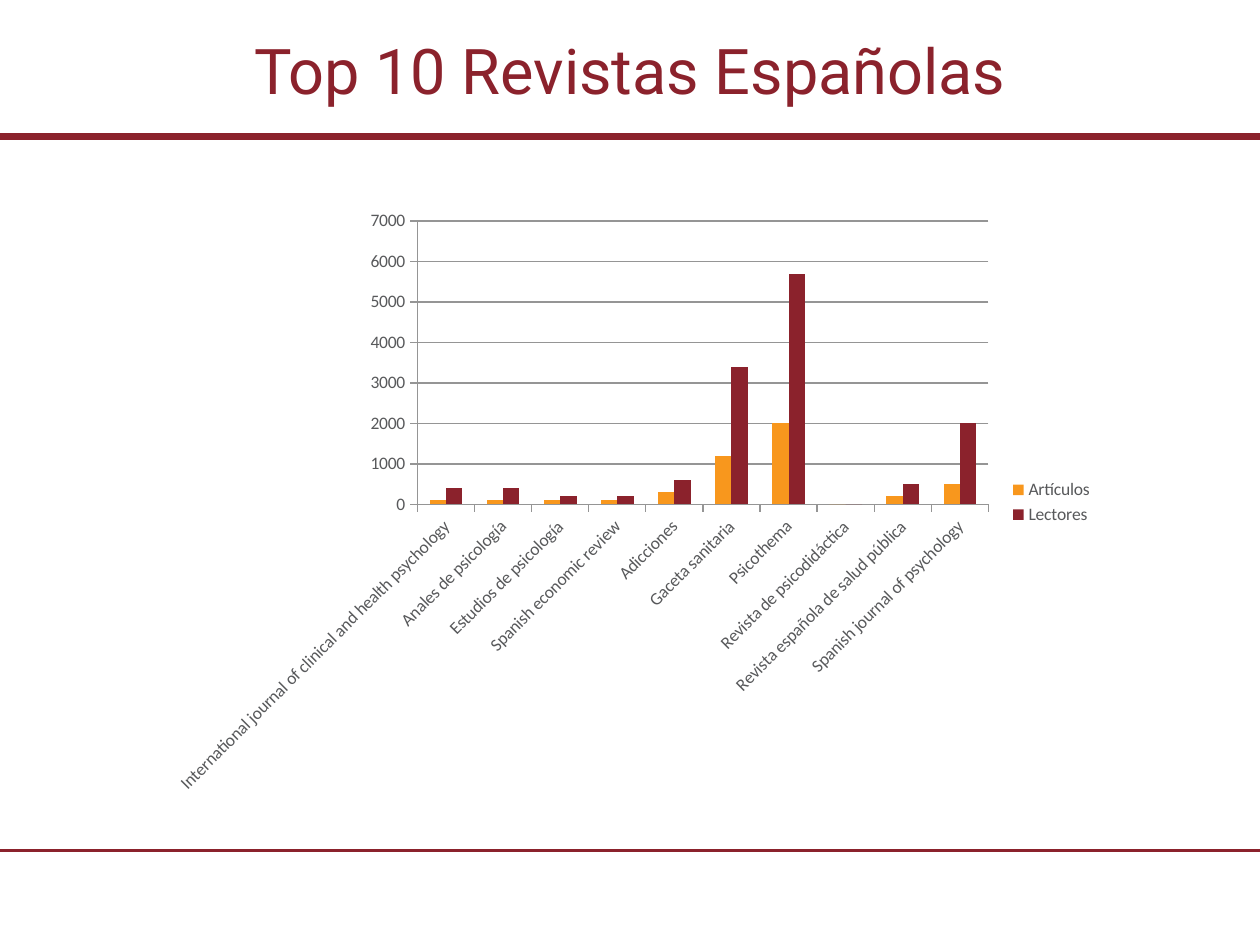
from dataclasses import dataclass

from lxml.etree import SubElement
from pptx import Presentation
from pptx.chart.data import CategoryChartData
from pptx.dml.color import RGBColor
from pptx.enum.chart import XL_CHART_TYPE as ChartType
from pptx.enum.chart import XL_LEGEND_POSITION as LegendPosition
from pptx.enum.chart import XL_TICK_MARK as TickMark
from pptx.enum.shapes import MSO_CONNECTOR as Connector
from pptx.enum.text import MSO_ANCHOR as Anchor
from pptx.enum.text import PP_ALIGN as Align
from pptx.oxml.ns import qn
from pptx.util import Pt


@dataclass(frozen=True)
class Theme:
    maroon: RGBColor = RGBColor(0x8B, 0x22, 0x2C)
    orange: RGBColor = RGBColor(0xF8, 0x97, 0x1D)
    text: RGBColor = RGBColor(0x58, 0x59, 0x5B)
    grid: RGBColor = RGBColor(0x95, 0x95, 0x95)
    title_font: str = "Roboto"
    chart_font: str = "Calibri"
    title_size: int = 36
    chart_size: int = 10


THEME = Theme()

JOURNALS = [
    # name, articles, readers
    ("International journal of clinical and health psychology", 100, 400),
    ("Anales de psicología", 100, 400),
    ("Estudios de psicología", 100, 200),
    ("Spanish economic review", 100, 200),
    ("Adicciones", 300, 600),
    ("Gaceta sanitaria", 1200, 3400),
    ("Psicothema", 2000, 5700),
    ("Revista de psicodidáctica", 0, 0),
    ("Revista española de salud pública", 200, 500),
    ("Spanish journal of psychology", 500, 2000),
]


def add_rule(page, left, right, top, width):
    rule = page.shapes.add_connector(
        Connector.STRAIGHT, Pt(left), Pt(top), Pt(right), Pt(top))
    rule.line.color.rgb = THEME.maroon
    rule.line.width = Pt(width)
    SubElement(rule._element.spPr, qn("a:effectLst"))


def set_title(page, text, left, top, width, height):
    title = page.shapes.title
    title.left, title.top = Pt(left), Pt(top)
    title.width, title.height = Pt(width), Pt(height)
    frame = title.text_frame
    frame.text = text
    frame.vertical_anchor = Anchor.MIDDLE
    para = frame.paragraphs[0]
    para.alignment = Align.CENTER
    font = para.runs[0].font
    font.name, font.size = THEME.title_font, Pt(THEME.title_size)
    font.color.rgb = THEME.maroon


def style_axis(axis):
    axis.major_tick_mark = TickMark.OUTSIDE
    axis.minor_tick_mark = TickMark.NONE
    axis.format.line.color.rgb = THEME.grid
    axis.format.line.width = Pt(0.75)


def add_journal_chart(page, left, top, width, height):
    names, articles, readers = zip(*JOURNALS)
    data = CategoryChartData(number_format="General")
    data.categories = names
    data.add_series("Artículos", articles)
    data.add_series("Lectores", readers)
    chart = page.shapes.add_chart(
        ChartType.COLUMN_CLUSTERED,
        Pt(left), Pt(top), Pt(width), Pt(height), data).chart
    chart.has_title = False
    chart.font.name, chart.font.size = THEME.chart_font, Pt(THEME.chart_size)
    chart.font.color.rgb = THEME.text

    # Columns
    plot = chart.plots[0]
    plot.vary_by_categories = False
    plot.gap_width, plot.overlap = 150, 0
    for series, color in zip(plot.series, (THEME.orange, THEME.maroon)):
        series.format.fill.solid()
        series.format.fill.fore_color.rgb = color

    # Axes, with slanted journal names
    style_axis(chart.category_axis)
    labels = chart.category_axis.tick_labels
    labels.font.size = Pt(THEME.chart_size)
    chart.category_axis._element.txPr.bodyPr.set("rot", "-2700000")
    values = chart.value_axis
    style_axis(values)
    values.minimum_scale, values.maximum_scale = 0, 7000
    values.major_unit = 1000
    values.has_major_gridlines = True
    values.major_gridlines.format.line.color.rgb = THEME.grid
    values.major_gridlines.format.line.width = Pt(0.75)

    # Legend
    chart.has_legend = True
    chart.legend.position = LegendPosition.RIGHT
    chart.legend.include_in_layout = False


def main():
    deck = Presentation()
    deck.slide_width, deck.slide_height = Pt(720), Pt(540)
    page = deck.slides.add_slide(deck.slide_layouts[0])
    subtitle = page.placeholders[1]._element
    subtitle.getparent().remove(subtitle)

    # Header and footer rules
    add_rule(page, 0, 725.76, 77.76, 4)
    add_rule(page, -2.88, 722.88, 486, 1.5)

    set_title(page, "Top 10 Revistas Españolas", 24, 1.5, 672, 76.5)
    add_journal_chart(page, 90, 113.75, 542, 346.5)

    deck.save("out.pptx")


if __name__ == "__main__":
    main()
